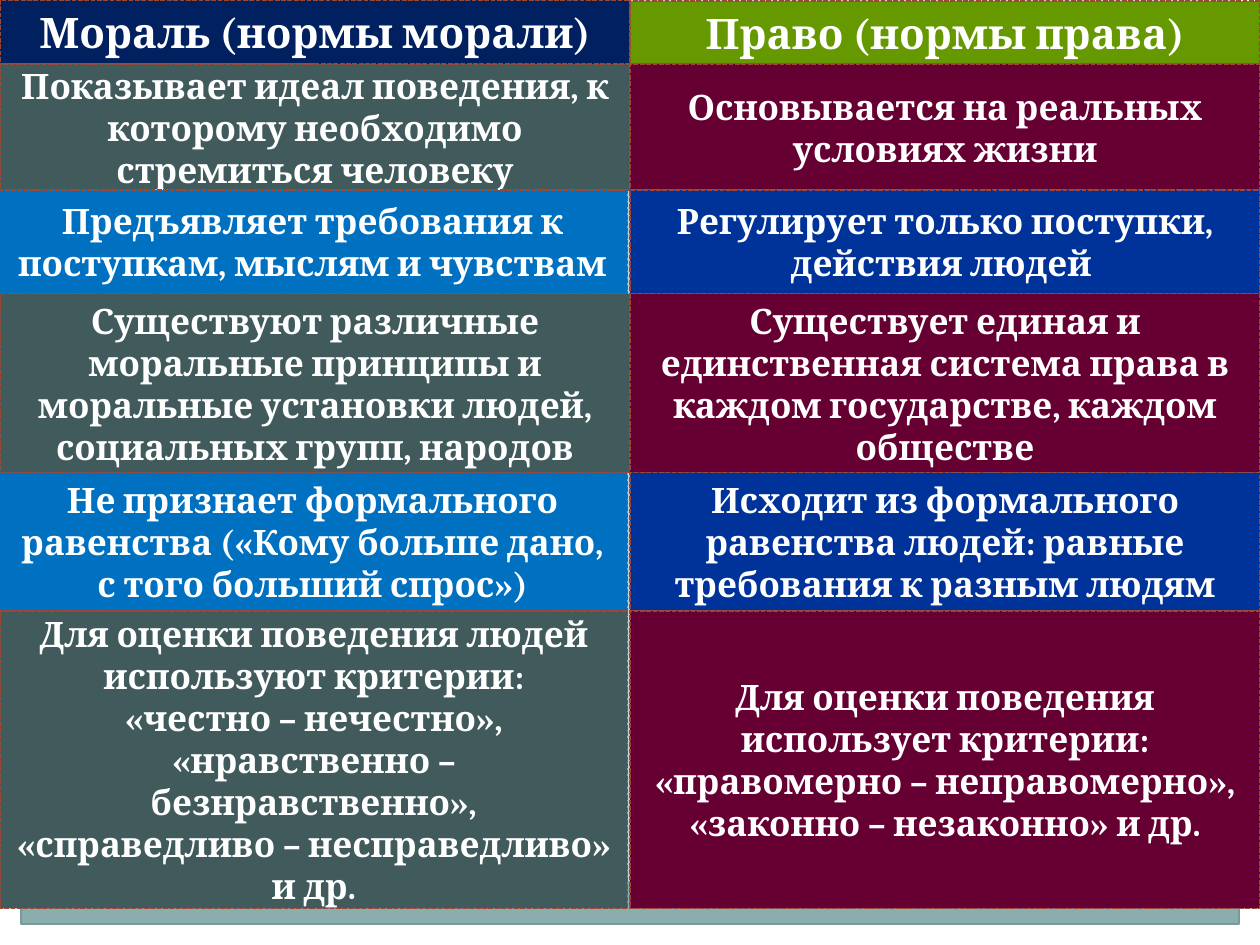
import pptx
import pptx.dml.color
import pptx.enum.dml
import pptx.enum.shapes
import pptx.enum.text
import pptx.util

Pt = pptx.util.Pt
WIDTH, HEIGHT = 720, 540
MARGIN = 12
COLUMN = WIDTH / 2
NUDGE = 1.44  # small shift of some left-hand cells

ROW_EDGES = [0, 36.72, 108.72, 167.76, 270, 349.2, 519.12]

# (fill, paragraphs) for the left and right cell of each row
ROWS = [
    (("002060", ["Мораль (нормы морали)"]),
     ("669900", ["Право (нормы права)"])),
    (("415B5C", ["Показывает идеал поведения, к которому необходимо стремиться человеку"]),
     ("660033", ["Основывается на реальных условиях жизни"])),
    (("0070C0", ["Предъявляет требования к поступкам, мыслям и чувствам"]),
     ("003399", ["Регулирует только поступки, действия людей "])),
    (("415B5C", ["Существуют различные моральные принципы и моральные установки людей, "
                 "социальных групп, народов"]),
     ("660033", ["Существует единая и единственная система права в каждом государстве, "
                 "каждом обществе"])),
    (("0070C0", ["Не признает формального равенства («Кому больше дано, с того больший спрос»)"]),
     ("003399", ["Исходит из формального равенства людей: равные требования к разным людям"])),
    (("415B5C", ["Для оценки поведения людей используют критерии:",
                 "«честно – нечестно»,",
                 "«нравственно – безнравственно»,",
                 "«справедливо – несправедливо» и др."]),
     ("660033", ["Для оценки поведения использует критерии:",
                 "«правомерно – неправомерно»,",
                 "«законно – незаконно» и др."])),
]


def paint(colour_format, colour):
    colour_format.rgb = pptx.dml.color.RGBColor.from_string(colour)


def add_box(page, left, top, width, height, fill=None, line=None, weight=0.75):
    box = page.shapes.add_shape(
        pptx.enum.shapes.MSO_SHAPE.RECTANGLE, Pt(left), Pt(top), Pt(width), Pt(height))
    box.shadow.inherit = False
    if fill:
        box.fill.solid()
        paint(box.fill.fore_color, fill)
    else:
        box.fill.background()
    if line:
        paint(box.line.color, line)
        box.line.width = Pt(weight)
    else:
        box.line.fill.background()
    return box


def add_frame(page, left, top, width, height):
    """White margins, footer band and thin outline behind the comparison."""
    bottom = top + height
    add_box(page, left, bottom - MARGIN, width, MARGIN, "FFFFFF")
    for edge in (left, left + width - MARGIN):
        add_box(page, edge, top, MARGIN, height, "FFFFFF")
    inner = width - 2 * MARGIN
    add_box(page, left + MARGIN, bottom - 36.5, inner, 24.5, "8CADAE")
    add_box(page, left + MARGIN, top + MARGIN, inner, height - 2 * MARGIN, line="7C999A")


def add_cell(page, left, top, width, height, fill, paragraphs, size):
    box = add_box(page, left, top, width, height, fill, "9B4936", 0.9)
    box.line.dash_style = pptx.enum.dml.MSO_LINE.SQUARE_DOT
    frame = box.text_frame
    frame.word_wrap = True
    frame.vertical_anchor = pptx.enum.text.MSO_ANCHOR.MIDDLE
    for index, text in enumerate(paragraphs):
        para = frame.add_paragraph() if index else frame.paragraphs[0]
        para.alignment = pptx.enum.text.PP_ALIGN.CENTER
        span = para.add_run()
        span.text = text
        span.font.name = "Cambria"
        span.font.size = Pt(size)
        span.font.bold = True
        paint(span.font.color, "FFFFFF")


def add_comparison(page, left, top):
    for index, (moral, law) in enumerate(ROWS):
        start, end = ROW_EDGES[index:index + 2]
        size = 20 if index else 24
        shift = NUDGE if index in (2, 4) else 0
        trim = NUDGE if index == 5 else 0
        add_cell(page, left - shift, top + start, COLUMN - trim, end - start, *moral, size)
        inset = 0 if index else 0.72
        add_cell(page, left + COLUMN, top + start + inset, COLUMN, end - start - inset,
                 *law, size)


def main():
    deck = pptx.Presentation()
    deck.slide_width, deck.slide_height = Pt(WIDTH), Pt(HEIGHT)
    page = deck.slides.add_slide(deck.slide_layouts[6])
    page.background.fill.solid()
    paint(page.background.fill.fore_color, "C5D1D7")
    add_frame(page, 0, 0, WIDTH, HEIGHT)
    add_comparison(page, 0, 0)
    deck.save("out.pptx")


if __name__ == "__main__":
    main()
